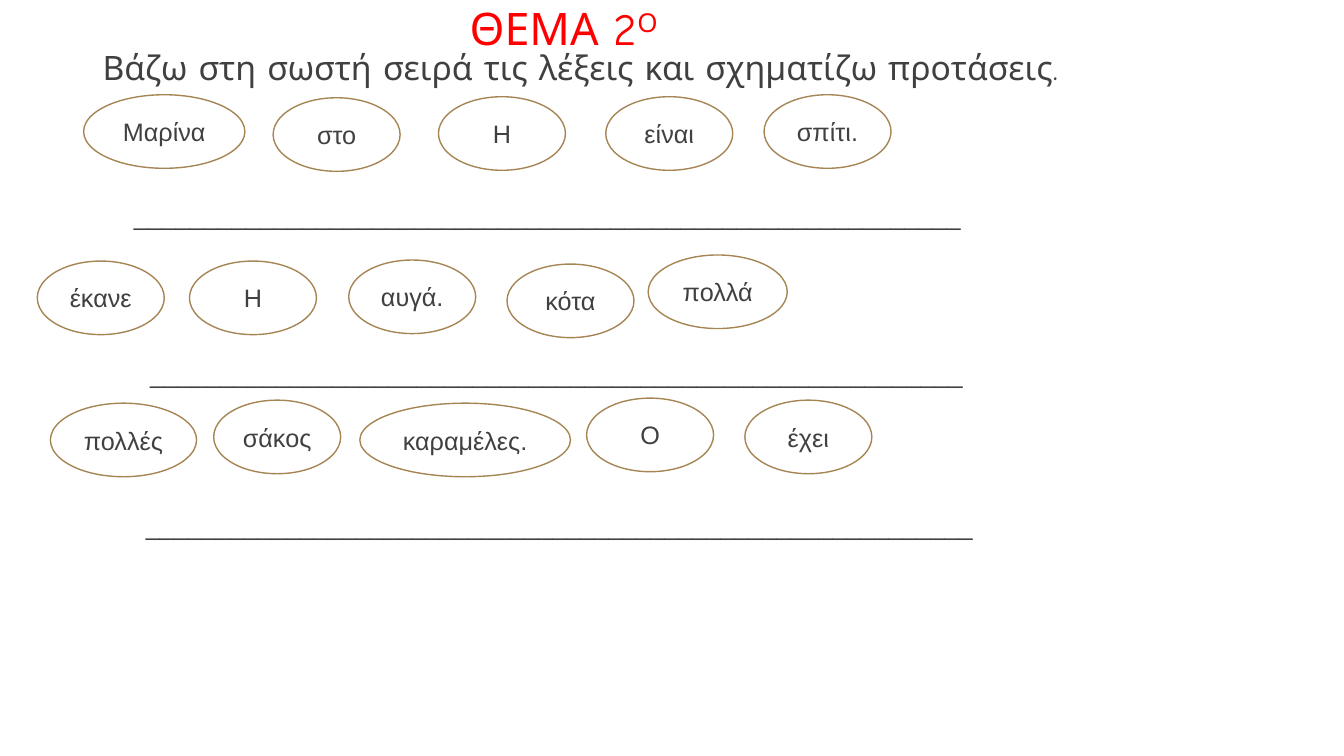
"""Build a Greek worksheet slide on putting scrambled words into sentences."""
from dataclasses import dataclass

from pptx import Presentation
from pptx.dml.color import RGBColor as Rgb
from pptx.enum.shapes import MSO_SHAPE as Preset
from pptx.enum.text import MSO_ANCHOR as Anchor, MSO_AUTO_SIZE as Fit, PP_ALIGN as Align
from pptx.util import Inches, Pt

COLUMNS, ROWS = 80, 45
COLORS = {"ink": "404040", "paper": "FFFFFF", "rim": "A68555", "heading": "FF0000"}
BODY, DISPLAY = "Arial", "Comic Neue"
BUBBLE_HEIGHT = 4.38

deck = Presentation()
deck.slide_width, deck.slide_height = Inches(13.333), Inches(7.5)
worksheet = deck.slides.add_slide(deck.slide_layouts[6])


@dataclass
class Word:
    text: str
    column: float
    row: float
    columns: float = 7.56


@dataclass
class Exercise:
    words: list[Word]
    blanks: int
    column: float
    row: float
    columns: float


EXERCISES = [
    Exercise([Word("Μαρίνα", 4.98, 5.64, 9.6), Word("στο", 16.26, 5.82),
              Word("Η", 26.1, 5.76), Word("είναι", 36.06, 5.76),
              Word("σπίτι.", 45.48, 5.64)], 59, 7.38, 11.64, 50.88),
    Exercise([Word("έκανε", 2.22, 15.54), Word("Η", 11.28, 15.54),
              Word("αυγά.", 20.76, 15.48), Word("κότα", 30.18, 15.72),
              Word("πολλά", 38.58, 15.18, 8.28)], 58, 8.34, 21.06, 50.04),
    Exercise([Word("πολλές", 3, 24, 8.7), Word("σάκος", 12.72, 23.82),
              Word("καραμέλες.", 21.42, 24, 12.54), Word("Ο", 34.92, 23.7),
              Word("έχει", 44.34, 23.82)], 59, 8.1, 30.06, 52.56),
]


def place(column: float, row: float, columns: float, rows: float) -> list[int]:
    """Turn grid units into slide lengths."""
    across, down = deck.slide_width / COLUMNS, deck.slide_height / ROWS
    return [round(n) for n in (column * across, row * down, columns * across, rows * down)]


def write(paragraph, text: str, size: int = 18, face: str = BODY, color: str = "ink"):
    """Add one styled run to a paragraph."""
    run = paragraph.add_run()
    run.text = text
    run.font.size, run.font.name = Pt(size), face
    run.font.color.rgb = Rgb.from_string(COLORS[color])
    return run


def add_text(area: list[int], wrap: bool = False):
    """Add a text box and return its frame."""
    frame = worksheet.shapes.add_textbox(*area).text_frame
    frame.word_wrap = wrap
    frame.auto_size = Fit.NONE if wrap else Fit.SHAPE_TO_FIT_TEXT
    return frame


def add_bubble(word: Word) -> None:
    """Draw one word in its oval."""
    bubble = worksheet.shapes.add_shape(
        Preset.OVAL, *place(word.column, word.row, word.columns, BUBBLE_HEIGHT))
    bubble.shadow.inherit = False
    bubble.fill.solid()
    bubble.fill.fore_color.rgb = Rgb.from_string(COLORS["paper"])
    bubble.line.color.rgb = Rgb.from_string(COLORS["rim"])
    bubble.line.width = Pt(1)
    frame = bubble.text_frame
    frame.word_wrap = False
    frame.vertical_anchor = Anchor.MIDDLE
    frame.paragraphs[0].alignment = Align.CENTER
    write(frame.paragraphs[0], word.text)


def add_exercise(exercise: Exercise) -> None:
    """Draw the scrambled words and the answer line below them."""
    for word in exercise.words:
        add_bubble(word)
    answer = add_text(place(exercise.column, exercise.row, exercise.columns, 2.4))
    write(answer.paragraphs[0], "_" * exercise.blanks)


def main() -> None:
    """Fill the worksheet and save it."""
    instruction = add_text(place(5.52, 2.4, 64.5, 3.12), wrap=True)
    instruction.vertical_anchor = Anchor.BOTTOM
    instruction.paragraphs[0].line_spacing = 0.9
    write(instruction.paragraphs[0],
          "Βάζω στη σωστή σειρά τις λέξεις και σχηματίζω προτάσεις.", 24, DISPLAY)
    for exercise in EXERCISES:
        add_exercise(exercise)
    heading = add_text(place(27.36, -0.24, 14.1, 3.84)).paragraphs[0]
    write(heading, "ΘΕΜΑ 2", 32, DISPLAY, "heading")
    ordinal = write(heading, "Ο", 32, DISPLAY, "heading")
    ordinal._r.get_or_add_rPr().set("baseline", "30000")
    deck.save("out.pptx")


if __name__ == "__main__":
    main()
